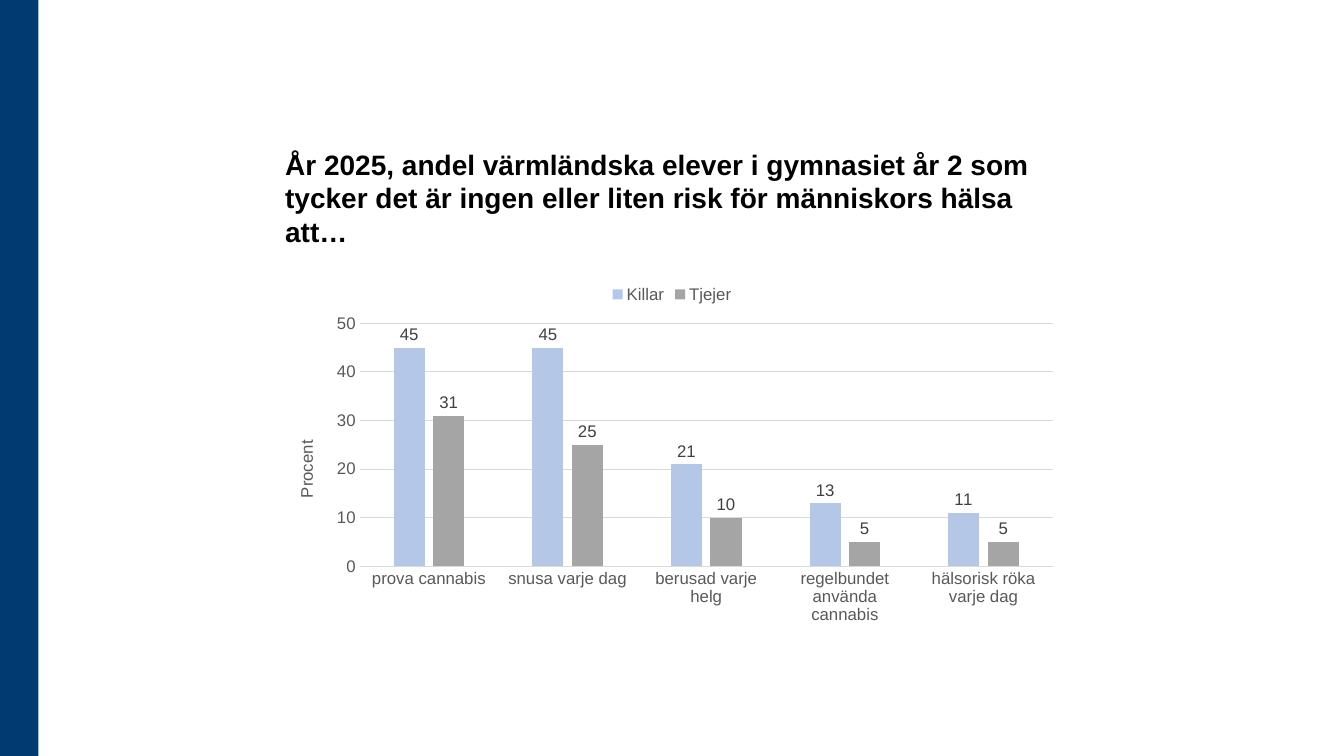
from pptx import Presentation
from pptx.chart.data import CategoryChartData
from pptx.dml.color import RGBColor
from pptx.enum.chart import (
    XL_CHART_TYPE as ChartType,
    XL_LABEL_POSITION as LabelPosition,
    XL_LEGEND_POSITION as LegendPosition,
    XL_TICK_MARK as TickMark,
)
from pptx.enum.shapes import MSO_SHAPE as Shape
from pptx.enum.text import MSO_ANCHOR as Anchor
from pptx.util import Inches, Pt

FONT = "Arial"
BLUE, BLACK, GRAY, GRID = "003A70", "000000", "595959", "D9D9D9"
LABEL_COLOR = "404040"
LEFT, WIDTH = 2.73, 7.87

TITLE = (
    "År 2025, andel värmländska elever i gymnasiet år 2 som tycker "
    "det är ingen eller liten risk för människors hälsa att…"
)
CATEGORIES = [
    "prova cannabis",
    "snusa varje dag",
    "berusad varje helg",
    "regelbundet använda cannabis",
    "hälsorisk röka varje dag",
]
SERIES = [
    ("Killar", "B4C7E7", [45, 45, 21, 13, 11]),
    ("Tjejer", "A5A5A5", [31, 25, 10, 5, 5]),
]


def rgb(value):
    return RGBColor.from_string(value)


def style_font(font, size, color, bold=False):
    font.name = FONT
    font.size = Pt(size)
    font.bold = bold
    font.color.rgb = rgb(color)


def style_line(line, color):
    line.color.rgb = rgb(color)
    line.width = Pt(0.75)


def add_side_band(page, height):
    band = page.shapes.add_shape(Shape.RECTANGLE, 0, 0, Inches(0.38), height)
    band.shadow.inherit = False
    band.fill.solid()
    band.fill.fore_color.rgb = rgb(BLUE)
    band.line.fill.background()


def add_title(page):
    box = page.shapes.add_textbox(
        Inches(LEFT), Inches(1.06), Inches(WIDTH), Inches(1.45)
    )
    frame = box.text_frame
    frame.word_wrap = True
    frame.vertical_anchor = Anchor.BOTTOM
    frame.text = TITLE
    style_font(frame.paragraphs[0].runs[0].font, 20, BLACK, bold=True)


def style_axes(chart):
    for axis in (chart.category_axis, chart.value_axis):
        axis.major_tick_mark = TickMark.NONE
        axis.minor_tick_mark = TickMark.NONE
        style_font(axis.tick_labels.font, 12, GRAY)
    style_line(chart.category_axis.format.line, GRID)

    values = chart.value_axis
    values.minimum_scale, values.maximum_scale = 0, 50
    values.major_unit = 10
    values.tick_labels.number_format = "0"
    values.tick_labels.number_format_is_linked = False
    values.format.line.fill.background()
    style_line(values.major_gridlines.format.line, GRID)
    frame = values.axis_title.text_frame
    frame.text = "Procent"
    style_font(frame.paragraphs[0].runs[0].font, 12, GRAY)


def style_series(series, color):
    series.format.fill.solid()
    series.format.fill.fore_color.rgb = rgb(color)
    labels = series.data_labels
    labels.show_value = True
    labels.position = LabelPosition.OUTSIDE_END
    labels.number_format = "0"
    labels.number_format_is_linked = False
    style_font(labels.font, 12, LABEL_COLOR)


def add_risk_chart(page):
    data = CategoryChartData(number_format="0")
    data.categories = CATEGORIES
    for name, _, values in SERIES:
        data.add_series(name, values)
    chart = page.shapes.add_chart(
        ChartType.COLUMN_CLUSTERED,
        Inches(LEFT), Inches(2.72), Inches(WIDTH), Inches(3.54),
        data,
    ).chart
    style_font(chart.font, 12, BLACK)
    chart.has_title = False
    chart.has_legend = True
    chart.legend.position = LegendPosition.TOP
    chart.legend.include_in_layout = False
    style_font(chart.legend.font, 12, GRAY)
    style_axes(chart)

    plot = chart.plots[0]
    plot.vary_by_categories = False
    plot.gap_width = 219
    plot.overlap = -27
    for series, (_, color, _) in zip(plot.series, SERIES):
        style_series(series, color)


def main():
    deck = Presentation()
    deck.slide_width = Inches(13.33)
    deck.slide_height = Inches(7.5)
    page = deck.slides.add_slide(deck.slide_layouts[6])
    add_side_band(page, deck.slide_height)
    add_title(page)
    add_risk_chart(page)
    deck.save("out.pptx")


if __name__ == "__main__":
    main()
